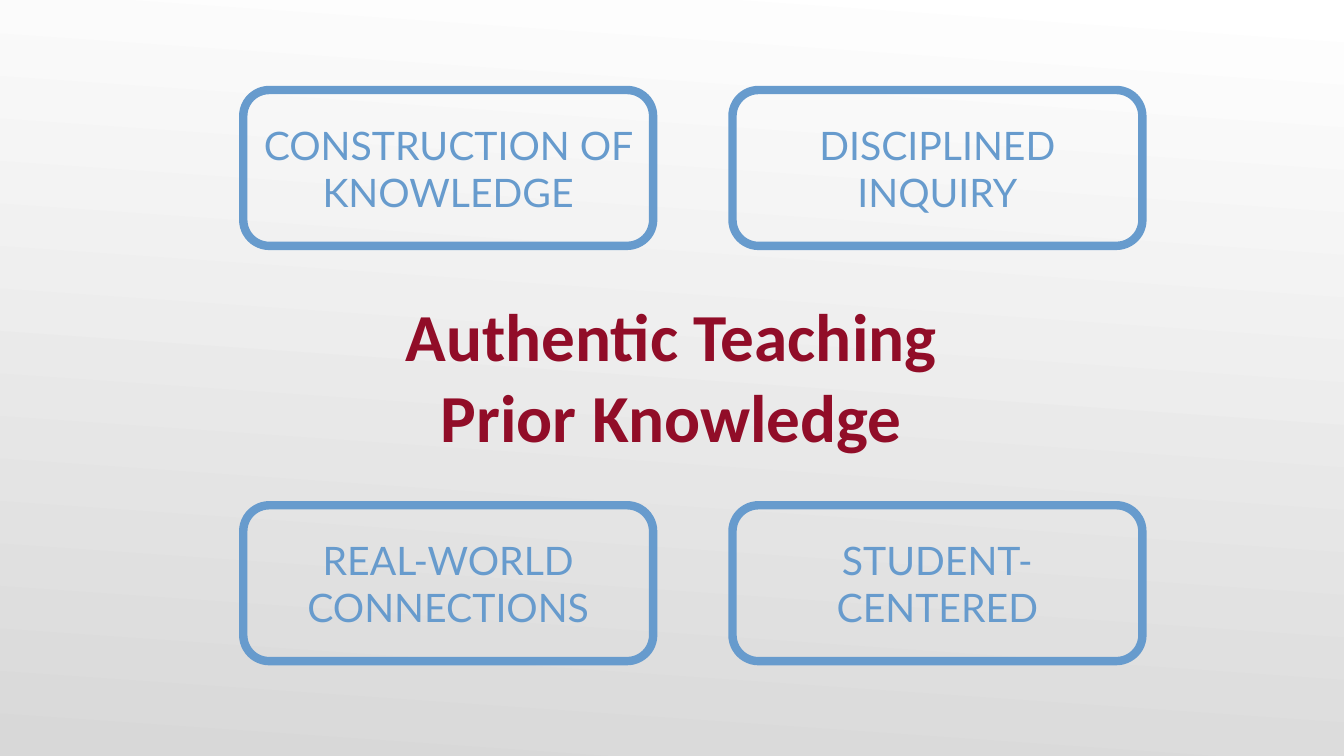
from pptx import Presentation
from pptx import util as u
from pptx.dml.color import RGBColor
from pptx.enum import shapes, text

THEME = {
    "blue": RGBColor.from_string("679BCD"),
    "red": RGBColor.from_string("910D28"),
    "backdrop": ("FFFFFF", "D8D8D8"),
    "box": {"name": "Lato", "size": u.Pt(21), "bold": False},
    "title": {"name": "Calibri", "size": u.Pt(36), "bold": True},
    "border": u.Pt(4.5),
}
FRAME = {
    "margin_left": u.Inches(0.07),
    "margin_right": u.Inches(0.07),
    "margin_top": u.Inches(0.04),
    "margin_bottom": u.Inches(0.04),
    "word_wrap": True,
    "auto_size": text.MSO_AUTO_SIZE.NONE,
}
LEFT, TOP, COL_STEP, ROW_STEP = 1.81, 0.67, 3.64, 3.09
BOX_W, BOX_H = 3.05, 1.16
LABELS = [
    ["CONSTRUCTION OF KNOWLEDGE", "DISCIPLINED INQUIRY"],
    ["REAL-WORLD CONNECTIONS", "STUDENT-CENTERED"],
]


def write(sp, lines, font, color, anchor):
    tf = sp.text_frame
    for key, value in {**FRAME, "vertical_anchor": anchor}.items():
        setattr(tf, key, value)
    tf.text = "\n".join(lines)
    for p in tf.paragraphs:
        p.alignment = text.PP_ALIGN.CENTER
        for r in p.runs:
            for key, value in font.items():
                setattr(r.font, key, value)
            r.font.color.rgb = color


prs = Presentation()
prs.slide_width = u.Inches(10)
prs.slide_height = prs.slide_width * 9 // 16
s = prs.slides.add_slide(prs.slide_layouts[5])

fill = s.background.fill
fill.gradient()
fill.gradient_angle = 360 - 94
for stop, position, color in zip(fill.gradient_stops, (0, 1), THEME["backdrop"]):
    stop.position = position
    stop.color.rgb = RGBColor.from_string(color)

for row, labels in enumerate(LABELS):
    for col, label in enumerate(labels):
        sp = s.shapes.add_shape(
            shapes.MSO_SHAPE.ROUNDED_RECTANGLE,
            u.Inches(LEFT + col * COL_STEP), u.Inches(TOP + row * ROW_STEP),
            u.Inches(BOX_W), u.Inches(BOX_H))
        sp.shadow.inherit = False
        sp.fill.background()
        sp.line.color.rgb = THEME["blue"]
        sp.line.width = THEME["border"]
        write(sp, [label], THEME["box"], THEME["blue"], text.MSO_ANCHOR.MIDDLE)

title = s.shapes.title
for key, value in {"left": 1.21, "top": 2.15, "width": 7.57, "height": 1.2}.items():
    setattr(title, key, u.Inches(value))
write(title, ["Authentic Teaching", "Prior Knowledge"],
      THEME["title"], THEME["red"], text.MSO_ANCHOR.TOP)

prs.save("out.pptx")
